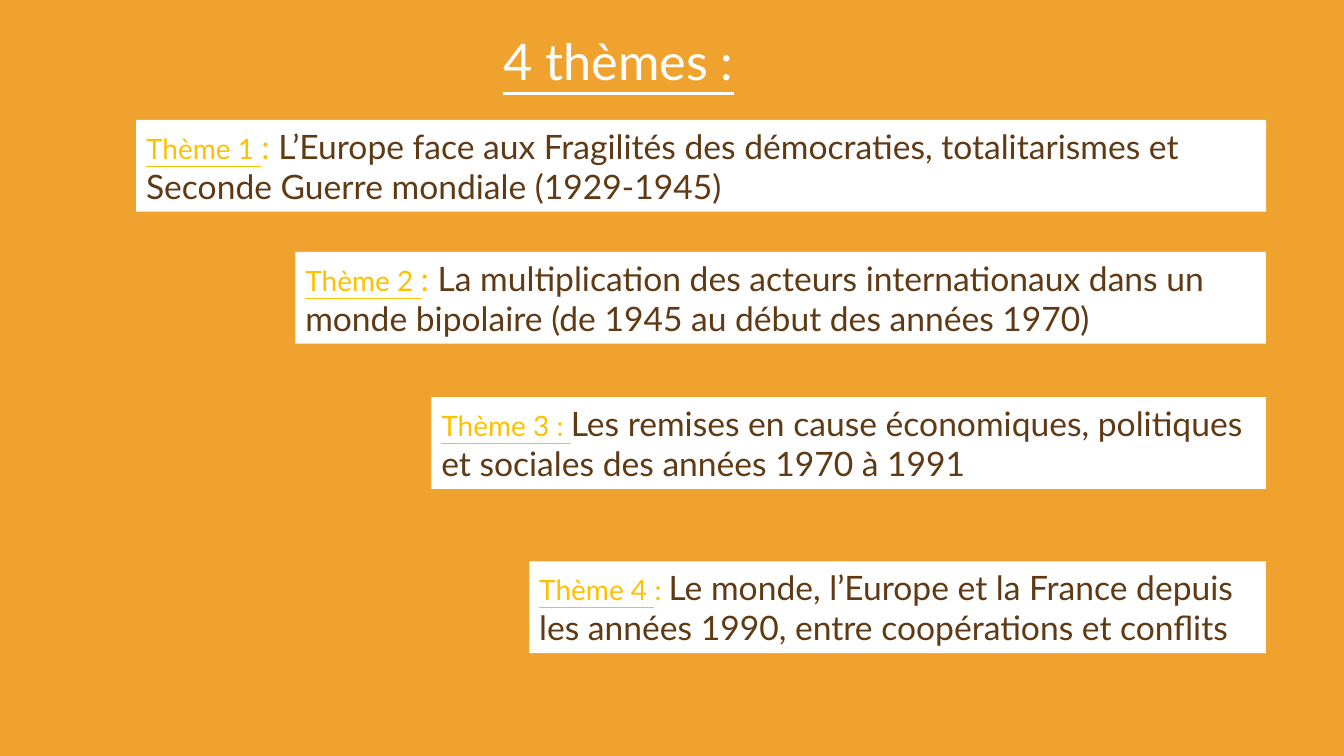
from pptx import Presentation
from pptx.dml.color import RGBColor
from pptx.enum.shapes import MSO_SHAPE
from pptx.enum.text import MSO_ANCHOR, MSO_AUTO_SIZE, PP_ALIGN
from pptx.util import Inches, Pt

RECTANGLE = MSO_SHAPE.RECTANGLE
LEFT, CENTER = PP_ALIGN.LEFT, PP_ALIGN.CENTER
MIDDLE, TOP = MSO_ANCHOR.MIDDLE, MSO_ANCHOR.TOP
FIT_SHAPE = MSO_AUTO_SIZE.SHAPE_TO_FIT_TEXT

FONT = "Lato"
COLORS = {
    "background": "F0A22E",
    "white": "FFFFFF",
    "label": "FFC000",
    "text": "603A14",
}
TITLE_ONLY = 5

# Places are percentages of the slide's width and height.
RIGHT_EDGE = 94.2
BOX_HEIGHT = 12.13

# left, top, underlined label, (separator, size), subject
THEMES = [
    (10.13, 15.87, "Thème 1 ", (": ", 24),
     "L’Europe face aux Fragilités des démocraties, totalitarismes et "
     "Seconde Guerre mondiale (1929-1945)"),
    (21.98, 33.33, "Thème 2 ", (": ", 24),
     "La multiplication des acteurs internationaux dans un monde bipolaire "
     "(de 1945 au début des années 1970)"),
    (32.1, 52.53, "Thème 3 : ", None,
     "Les remises en cause économiques, politiques et sociales des années "
     "1970 à 1991"),
    (39.38, 74.27, "Thème 4 ", (": ", 20),
     "Le monde, l’Europe et la France depuis les années 1990, entre "
     "coopérations et conflits"),
]


def add_text(paragraph, text, *, size, color, underline=False):
    run = paragraph.add_run()
    run.text = text
    run.font.name = FONT
    run.font.size = Pt(size)
    run.font.underline = underline
    run.font.color.rgb = RGBColor.from_string(COLORS[color])


class ThemeSlide:
    def __init__(self, presentation):
        self.width = presentation.slide_width
        self.height = presentation.slide_height
        layout = presentation.slide_layouts[TITLE_ONLY]
        self.slide = presentation.slides.add_slide(layout)
        self.fill(self.slide.background, "background")

    def fill(self, target, color):
        target.fill.solid()
        target.fill.fore_color.rgb = RGBColor.from_string(COLORS[color])

    def place(self, left, top, width, height):
        """Turn percentages of the slide into lengths."""
        return (int(self.width * left / 100), int(self.height * top / 100),
                int(self.width * width / 100), int(self.height * height / 100))

    def paragraph(self, shape, alignment, anchor):
        """Set up the text frame and return its first paragraph."""
        frame = shape.text_frame
        frame.word_wrap = True
        frame.auto_size = FIT_SHAPE
        frame.vertical_anchor = anchor
        frame.paragraphs[0].alignment = alignment
        return frame.paragraphs[0]

    def title(self, text, *place):
        shape = self.slide.shapes.title
        shape.left, shape.top, shape.width, shape.height = self.place(*place)
        add_text(self.paragraph(shape, CENTER, TOP), text,
                 size=36, color="white", underline=True)

    def theme(self, left, top, label, separator, subject):
        place = self.place(left, top, RIGHT_EDGE - left, BOX_HEIGHT)
        shape = self.slide.shapes.add_shape(RECTANGLE, *place)
        shape.shadow.inherit = False
        self.fill(shape, "white")
        shape.line.fill.background()
        paragraph = self.paragraph(shape, LEFT, MIDDLE)
        add_text(paragraph, label, size=20, color="label", underline=True)
        if separator:
            mark, size = separator
            add_text(paragraph, mark, size=size, color="label")
        add_text(paragraph, subject, size=24, color="text")


def main():
    presentation = Presentation()
    presentation.slide_width = Inches(13.33)
    presentation.slide_height = Inches(7.5)
    slide = ThemeSlide(presentation)
    slide.title("4 thèmes :", 32.63, 3.33, 26.78, 9.47)
    for theme in THEMES:
        slide.theme(*theme)
    presentation.save("out.pptx")


if __name__ == "__main__":
    main()
